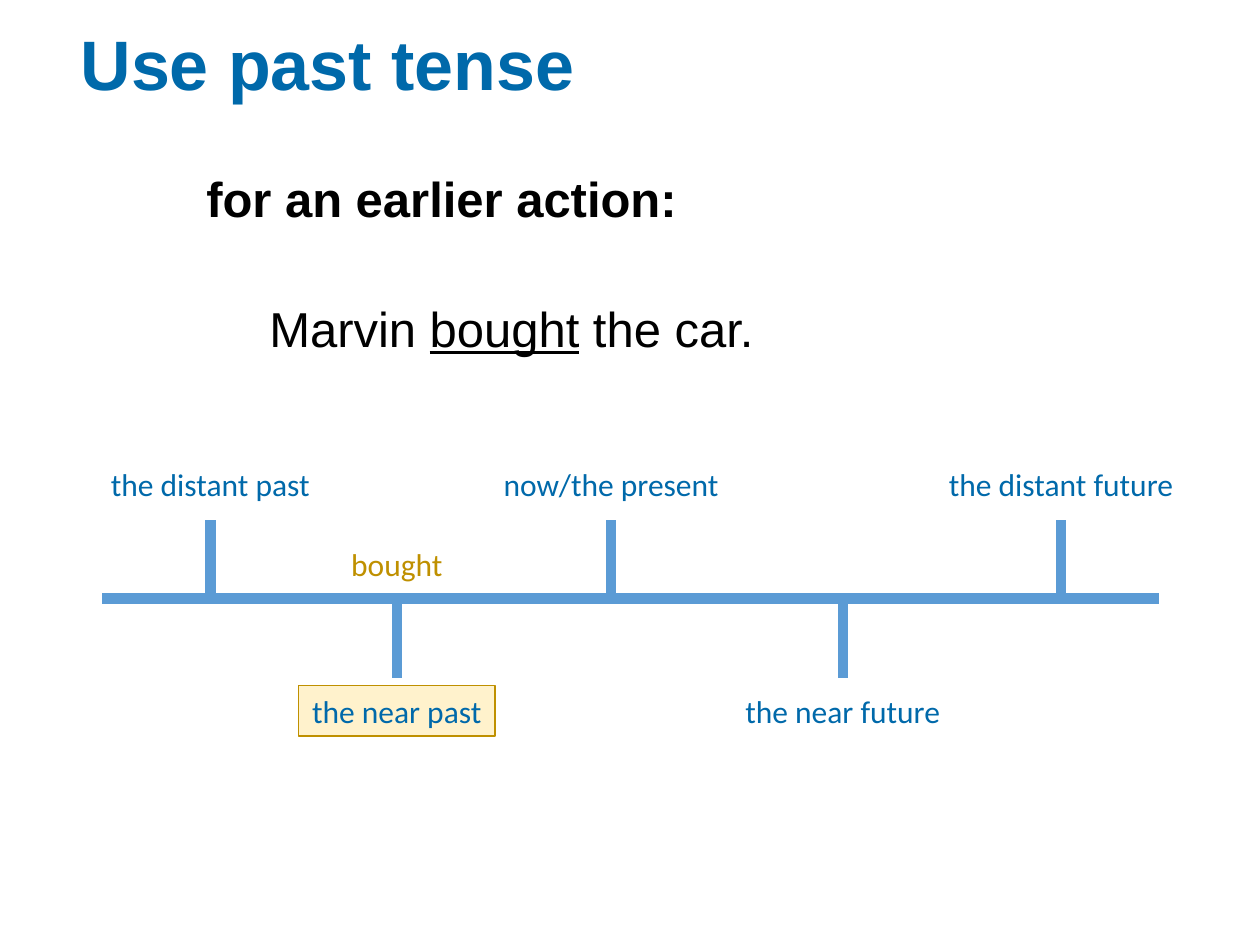
from lxml import etree
from pptx import Presentation
from pptx import util as u
from pptx.dml.color import RGBColor
from pptx.enum import shapes, text
from pptx.oxml.ns import qn

BLUE, AXIS, GOLD, CREAM, BLACK = "0069AA", "5B9BD5", "BF9000", "FFF2CC", "000000"
TICK, LABEL_HEIGHT = 1.59, 1.02

# Name, distance along the axis, label width, above the axis, highlighted
MOMENTS = [
    ("the distant past", 2.18, 4.58, True, False),
    ("the near past", 5.94, 3.96, False, True),
    ("now/the present", 10.26, 4.9, True, False),
    ("the near future", 14.93, 4.5, False, False),
    ("the distant future", 19.33, 5.08, True, False),
]


def color(value):
    return RGBColor.from_string(value)


def add_span(para, words, hue, **formats):
    span = para.add_run()
    span.text = words
    span.font.color.rgb = color(hue)
    for name, value in formats.items():
        setattr(span.font, name, value)


def add_line(page, x1, y1, x2, y2):
    line = page.shapes.add_connector(
        shapes.MSO_CONNECTOR.STRAIGHT, *map(u.Cm, (x1, y1, x2, y2)))
    line.line.color.rgb = color(AXIS)
    line.line.width = u.Pt(6)
    etree.SubElement(line._element.spPr, qn("a:effectLst"))


def add_label(page, words, center, top, width, hue=BLUE, boxed=False):
    place = map(u.Cm, (center - width / 2, top, width, LABEL_HEIGHT))
    if boxed:
        label = page.shapes.add_shape(shapes.MSO_SHAPE.RECTANGLE, *place)
        label.shadow.inherit = False
        label.fill.solid()
        label.fill.fore_color.rgb = color(CREAM)
        label.line.color.rgb = color(GOLD)
        label.line.width = u.Pt(0.75)
    else:
        label = page.shapes.add_textbox(*place)
    frame = label.text_frame
    frame.word_wrap = False
    frame.vertical_anchor = text.MSO_ANCHOR.TOP
    para = frame.paragraphs[0]
    para.alignment = text.PP_ALIGN.CENTER
    add_span(para, words, hue, name="Calibri", size=u.Pt(18))


def add_title(page, left, top, width, height):
    title = page.shapes.title
    title.left, title.top, title.width, title.height = map(
        u.Cm, (left, top, width, height))
    frame = title.text_frame
    frame.vertical_anchor = text.MSO_ANCHOR.MIDDLE
    para = frame.paragraphs[0]
    para.alignment = text.PP_ALIGN.LEFT
    para.line_spacing = 0.9
    add_span(para, "Use past tense", BLUE, name="Arial", size=u.Pt(40), bold=True)


def add_example(page, left, top, width, height):
    box = page.shapes.add_textbox(*map(u.Cm, (left, top, width, height)))
    frame = box.text_frame
    frame.word_wrap = True
    base = {"name": "Arial", "size": u.Pt(28)}

    # Rule
    rule = frame.paragraphs[0]
    rule.line_spacing = 0.9
    add_span(rule, "for an earlier action:", BLACK, bold=True, **base)

    # Indented sentence with the verb underlined
    sentence = frame.add_paragraph()
    sentence.line_spacing = 0.9
    sentence.space_before = u.Pt(44)
    sentence._p.get_or_add_pPr().set("marL", str(u.Cm(1.27)))
    for words, underline in (("Marvin ", False), ("bought", True), (" the car.", False)):
        add_span(sentence, words, BLACK, underline=underline, **base)


def add_timeline(page, left, top, width):
    """Draw the axis from (left, top), with its moments above and below."""
    # Ticks and their labels
    for words, offset, label_width, above, boxed in MOMENTS:
        x = left + offset
        tick_end = top - TICK if above else top + TICK
        label_top = top - 2.82 if above else top + 1.75
        add_line(page, x, top, x, tick_end)
        add_label(page, words, x, label_top, label_width, boxed=boxed)

    # Axis and the verb placed on it
    add_line(page, left, top, left + width, top)
    add_label(page, "bought", left + MOMENTS[1][1], top - 1.2, 2.39, GOLD)


def main():
    deck = Presentation()
    deck.slide_width, deck.slide_height = u.Cm(25.4), u.Cm(19.05)
    page = deck.slides.add_slide(deck.slide_layouts[5])
    add_title(page, 1.37, 0.74, 22.68, 1.27)
    add_example(page, 3.91, 3.4, 17.58, 4.22)
    add_timeline(page, 2.06, 12.07, 21.31)
    deck.save("out.pptx")


if __name__ == "__main__":
    main()
